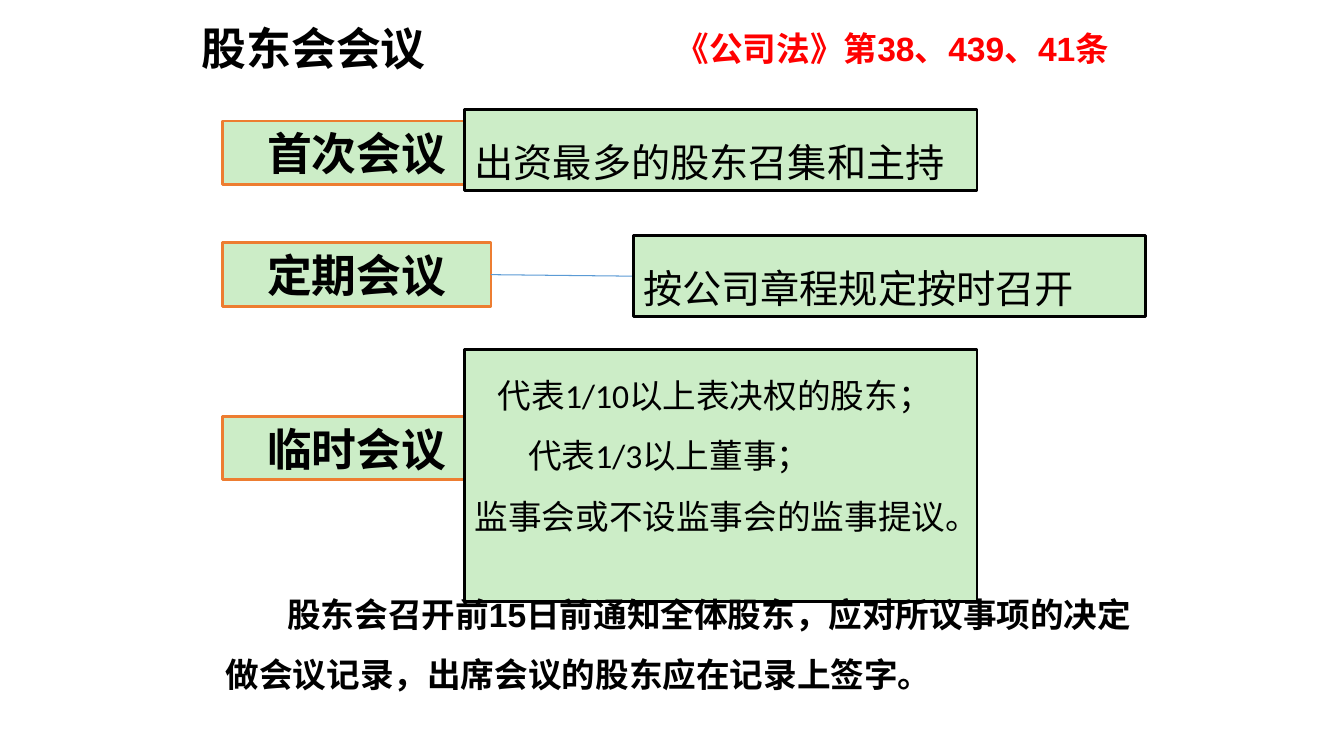
import pptx
import pptx.util
import pptx.dml.color
import pptx.enum.shapes
import pptx.enum.text
import pptx.oxml.ns
import lxml.etree

Inches = pptx.util.Inches
Pt = pptx.util.Pt
ALIGN = pptx.enum.text.PP_ALIGN
CJK = "Noto Sans CJK SC"
COLORS = {
    "text": "000000",
    "law": "FF0000",
    "panel": "CCEDC7",
    "label_line": "ED7D31",
    "link": "5B9BD5",
}


def rgb(name):
    return pptx.dml.color.RGBColor.from_string(COLORS[name])


class MeetingSlide:
    def __init__(self, deck):
        self.slide = deck.slides.add_slide(deck.slide_layouts[5])
        self.shapes = self.slide.shapes

    def set_text(self, shape, paragraphs, size, color="text", bold=False,
                 align=ALIGN.LEFT, spacing=1.0, wrap=True):
        frame = shape.text_frame
        frame.word_wrap = wrap
        frame.auto_size = pptx.enum.text.MSO_AUTO_SIZE.SHAPE_TO_FIT_TEXT
        frame.vertical_anchor = pptx.enum.text.MSO_ANCHOR.TOP
        for index, (indent, runs) in enumerate(paragraphs):
            paragraph = frame.add_paragraph() if index else frame.paragraphs[0]
            paragraph.alignment = align
            paragraph.line_spacing = spacing
            if indent:
                properties = paragraph._p.get_or_add_pPr()
                properties.set("marL", "0")
                properties.set("indent", str(Inches(indent)))
            for words, font in runs:
                run = paragraph.add_run()
                run.text = words
                run.font.size = Pt(size)
                run.font.bold = bold
                run.font.color.rgb = rgb(color)
                run.font.name = font
                east_asian = lxml.etree.SubElement(
                    run._r.get_or_add_rPr(), pptx.oxml.ns.qn("a:ea"))
                east_asian.set("typeface", CJK)

    def title(self, words, left, top, width, height):
        heading = self.shapes.title
        heading.left, heading.top = Inches(left), Inches(top)
        heading.width, heading.height = Inches(width), Inches(height)
        self.set_text(heading, [(0, [(words, "Arial")])], 32, bold=True, wrap=False)

    def note(self, words, left, top, width, height, indent=0, **style):
        box = self.shapes.add_textbox(
            Inches(left), Inches(top), Inches(width), Inches(height))
        self.set_text(box, [(indent, [(words, "Arial")])], 24, bold=True, **style)

    def panel(self, left, top, width, height, line, paragraphs, size, **style):
        box = self.shapes.add_shape(
            pptx.enum.shapes.MSO_SHAPE.RECTANGLE,
            Inches(left), Inches(top), Inches(width), Inches(height))
        box.shadow.inherit = False
        box.fill.solid()
        box.fill.fore_color.rgb = rgb("panel")
        box.line.color.rgb = rgb(line)
        box.line.width = Pt(2)
        self.set_text(box, paragraphs, size, **style)
        return box

    def label(self, words, top):
        return self.panel(2.21, top, 2.66, 0.63, "label_line",
                          [(0, [(words, CJK)])], 32, bold=True, align=ALIGN.CENTER)

    def rule(self, label, left, top, height, paragraphs, size):
        link = self.shapes.add_connector(
            pptx.enum.shapes.MSO_CONNECTOR.STRAIGHT, 0, 0, 0, 0)
        link.line.color.rgb = rgb("link")
        link.line.width = Pt(0.75)
        lxml.etree.SubElement(
            link._element.spPr, pptx.oxml.ns.qn("a:effectLst"))
        detail = self.panel(left, top, 5.08, height, "text",
                            paragraphs, size, spacing=1.5)
        link.begin_connect(label, 3)
        link.end_connect(detail, 1)


def main():
    deck = pptx.Presentation()
    deck.slide_width, deck.slide_height = Inches(13.33), Inches(7.5)
    page = MeetingSlide(deck)
    page.title("股东会会议", 1.9, 0.16, 2.43, 0.63)

    extraordinary_callers = [
        (0.23, [("代表", CJK), ("1/10", "Calibri"), ("以上表决权的股东；", CJK)]),
        (0.53, [("代表", CJK), ("1/3", "Calibri"), ("以上董事；", CJK)]),
        (0, [("监事会或不设监事会的监事提议。", CJK)]),
    ]
    meetings = [
        ("首次会议", 1.2, 4.61, 1.09, 0.8,
         [(0, [("出资最多的股东召集和主持", CJK)])], 28),
        ("定期会议", 2.41, 6.28, 2.34, 0.8,
         [(0, [("按公司章程规定按时召开", CJK)])], 28),
        ("临时会议", 4.13, 4.61, 3.47, 2.5, extraordinary_callers, 24),
    ]
    for name, label_top, *detail in meetings:
        page.rule(page.label(name, label_top), *detail)

    page.note("股东会召开前15日前通知全体股东，应对所议事项的决定做会议记录，"
              "出席会议的股东应在记录上签字。",
              2.14, 5.64, 9.45, 1.3, indent=0.61, spacing=1.5)
    page.note("《公司法》第38、439、41条", 6.04, 0.23, 5.62, 0.5,
              color="law", align=ALIGN.CENTER)
    deck.save("out.pptx")


if __name__ == "__main__":
    main()
